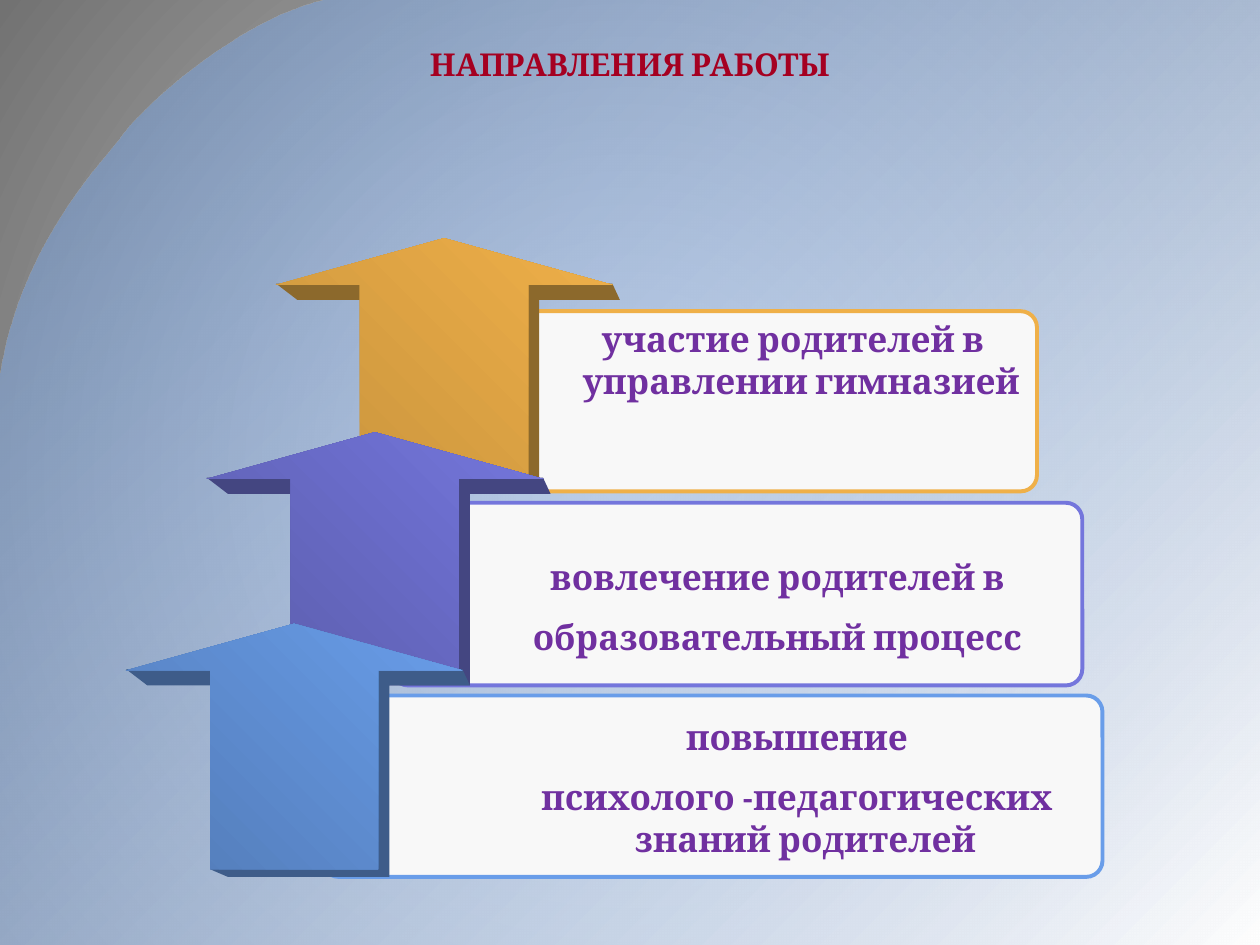
from lxml import etree
from pptx import Presentation
from pptx import util as u
from pptx.dml.color import RGBColor
from pptx.enum import shapes, text
from pptx.oxml.ns import qn

COLORS = {
    "bg_light": "CFCFCF", "bg_dark": "727272", "white": "FFFFFF",
    "title": "A50021", "text": "7030A0", "panel": "F8F8F8",
    "orange": "EFB049", "orange_dark": "C8933D", "orange_side": "8C692C",
    "violet": "7476DC", "violet_dark": "5A5CAB", "violet_side": "444681",
    "blue": "699DE9", "blue_dark": "527BB7", "blue_side": "3E5C89",
}
ARROW_W, ARROW_H = 2.67, 1.95
SIDE = [(0, 0.36), (0.17, 0.49), (0.67, 0.49), (0.67, 1.95), (0.81, 2.01),
        (2.09, 2.01), (2.09, 0.49), (2.73, 0.49), (2.67, 0.36)]
CURVES = [
    [(2.58, 0), (1.9, 0.16), (1.16, 0.83), (0.98, 1.07)],
    [(0.98, 1.07), (0.8, 1.32), (0.16, 1.94), (0, 3.01)],
]


def rgb(name):
    return RGBColor.from_string(COLORS[name])


def bezier(curve, steps=24):
    for i in range(1, steps + 1):
        t = i / steps
        weights = ((1 - t) ** 3, 3 * t * (1 - t) ** 2, 3 * t * t * (1 - t), t ** 3)
        yield tuple(sum(w * pt[axis] for w, pt in zip(weights, curve)) for axis in (0, 1))


class Deck:
    font = "Cambria"

    def __init__(self):
        self.prs = Presentation()
        self.prs.slide_width, self.prs.slide_height = u.Inches(10), u.Inches(7.5)
        self.s = self.prs.slides.add_slide(self.prs.slide_layouts[5])

    def gradient(self, fill, start, end, angle=None):
        fill.gradient()
        if angle is not None:
            fill.gradient_angle = angle
        for stop, name, position in zip(fill.gradient_stops, (start, end), (0, 1)):
            stop.color.rgb = rgb(name)
            stop.position = position

    def background(self):
        self.gradient(self.s.background.fill, "bg_light", "bg_dark")
        grad = self.s._element.find(".//" + qn("a:gradFill"))
        grad.remove(grad.find(qn("a:lin")))
        path = etree.SubElement(grad, qn("a:path"), path="circle")
        etree.SubElement(path, qn("a:fillToRect"), l="50000", t="50000", r="50000", b="50000")

    def outline(self, points):
        points = [(u.Inches(x), u.Inches(y)) for x, y in points]
        builder = self.s.shapes.build_freeform(*points[0], scale=1.0)
        builder.add_line_segments(points[1:], close=True)
        sp = builder.convert_to_shape()
        sp.shadow.inherit = False
        sp.line.fill.background()
        return sp

    def backdrop(self):
        edge = [CURVES[0][0]] + [pt for curve in CURVES for pt in bezier(curve)]
        sp = self.outline(edge + [(0, 7.5), (10, 7.5), (10, 0)])
        self.gradient(sp.fill, "blue", "white", 315)
        clr = sp._element.spPr.find(".//" + qn("a:srgbClr"))
        etree.SubElement(clr, qn("a:alpha"), val="39000")
        self.s.shapes._spTree.insert(2, sp._element)

    def shape(self, kind, x, y, w, h, adjustments):
        sp = self.s.shapes.add_shape(kind, *map(u.Inches, (x, y, w, h)))
        sp.shadow.inherit = False
        for i, value in enumerate(adjustments):
            sp.adjustments[i] = value
        return sp

    def panel(self, x, y, w, h, color):
        sp = self.shape(shapes.MSO_SHAPE.ROUNDED_RECTANGLE, x, y, w, h, [0.09])
        sp.fill.solid()
        sp.fill.fore_color.rgb = rgb("panel")
        sp.line.color.rgb = rgb(color)
        sp.line.width = u.Pt(2.25)

    def arrow(self, x, y, color):
        side = self.outline([(x + dx, y + dy) for dx, dy in SIDE])
        side.fill.solid()
        side.fill.fore_color.rgb = rgb(color + "_side")
        sp = self.shape(shapes.MSO_SHAPE.UP_ARROW, x, y, ARROW_W, ARROW_H, [0.5, 0.19])
        self.gradient(sp.fill, color + "_dark", color, 45)
        sp.line.fill.background()

    def style(self, p, size, color):
        p.alignment = text.PP_ALIGN.CENTER
        p.font.name = self.font
        p.font.size = u.Pt(size)
        p.font.bold = True
        p.font.color.rgb = rgb(color)

    def title(self, words, x, y, w, h):
        sp = self.s.shapes.title
        sp.left, sp.top, sp.width, sp.height = map(u.Inches, (x, y, w, h))
        tf = sp.text_frame
        tf.text = words
        tf.vertical_anchor = text.MSO_ANCHOR.MIDDLE
        self.style(tf.paragraphs[0], 18, "title")

    def label(self, lines, x, y, w, h):
        tf = self.s.shapes.add_textbox(*map(u.Inches, (x, y, w, h))).text_frame
        tf.word_wrap = True
        for i, line in enumerate(lines):
            p = tf.add_paragraph() if i else tf.paragraphs[0]
            p.text = line
            pPr = p._p.get_or_add_pPr()
            pPr.set("marL", str(u.Inches(0.13)))
            pPr.set("indent", str(-u.Inches(0.13)))
            if i:
                p.space_before = u.Pt(10)
            self.style(p, 20, "text")


def main():
    deck = Deck()
    deck.background()
    deck.backdrop()
    deck.title("НАПРАВЛЕНИЯ РАБОТЫ", 0.5, 0.2, 9, 0.62)
    deck.panel(3.39, 2.47, 4.84, 1.43, "orange")
    deck.panel(3.11, 3.99, 5.48, 1.45, "violet")
    deck.arrow(2.19, 1.89, "orange")
    deck.arrow(1.64, 3.43, "violet")
    deck.panel(2.56, 5.52, 6.19, 1.44, "blue")
    deck.arrow(1, 4.95, "blue")
    deck.label(["повышение", "психолого -педагогических знаний родителей"],
               3.67, 5.63, 5.31, 1.28)
    deck.label(["участие родителей в управлении гимназией"], 4.13, 2.47, 4.33, 0.77)
    deck.label(["вовлечение родителей в", "образовательный процесс"],
               2.34, 4.36, 7.66, 0.98)
    deck.prs.save("out.pptx")


if __name__ == "__main__":
    main()
